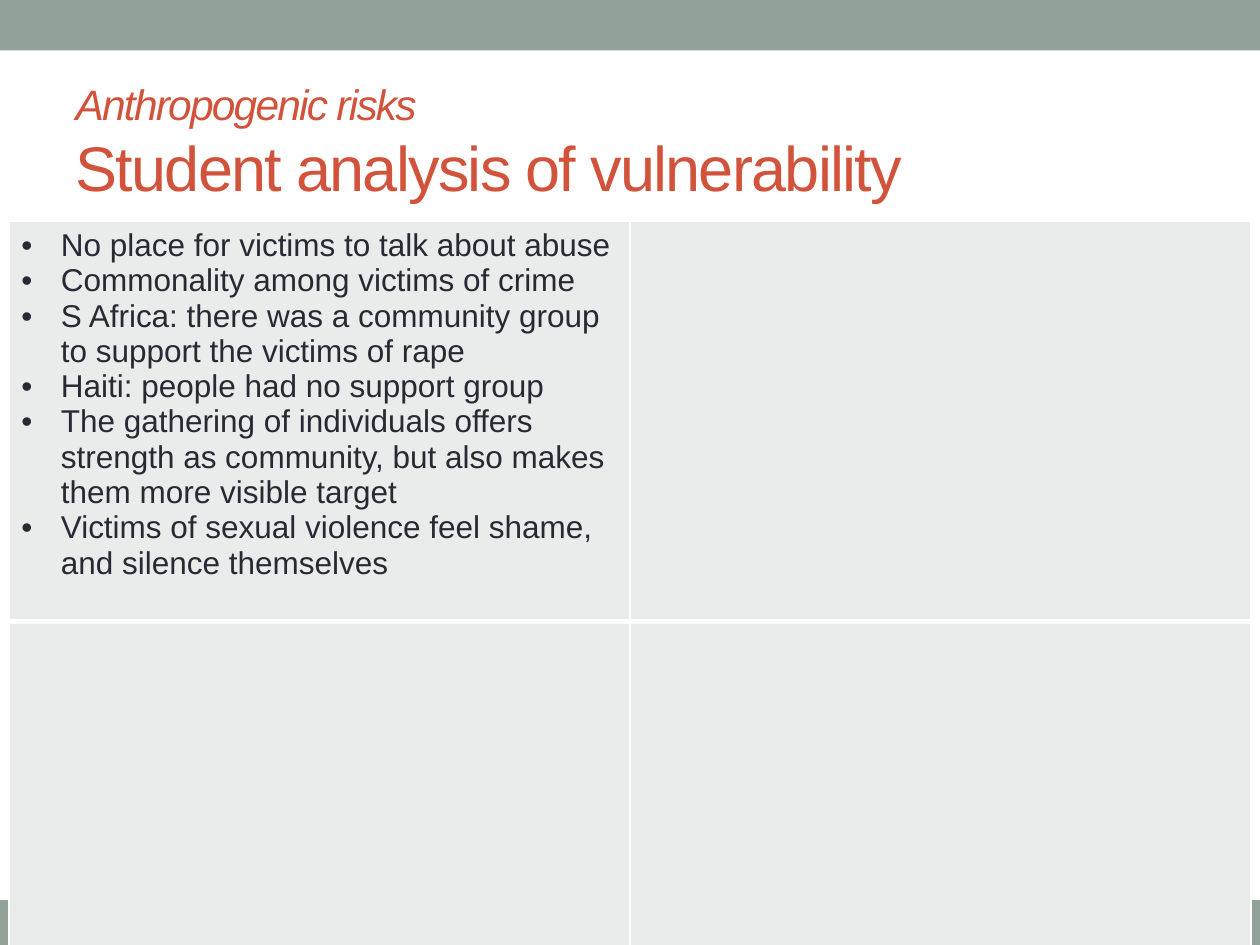
from lxml import etree
from pptx import Presentation
from pptx.dml.color import RGBColor
from pptx.enum.shapes import MSO_SHAPE
from pptx.enum.text import MSO_ANCHOR, MSO_AUTO_SIZE, PP_ALIGN
from pptx.oxml import parse_xml
from pptx.oxml.ns import nsdecls, qn
from pptx.util import Pt

SAGE = RGBColor(0x93, 0xA2, 0x99)
RUST = RGBColor(0xD2, 0x53, 0x3C)
INK = RGBColor(0x29, 0x29, 0x34)
PALE = RGBColor(0xE9, 0xEC, 0xEB)
WHITE = RGBColor(0xFF, 0xFF, 0xFF)

BAR_STOPS = [(0, "7B8E82"), (34, "7B8D83"), (70, "8A9E92"), (100, "93A299")]
TITLE_LINES = [
    ("Anthropogenic risks", {"size": Pt(24.3), "italic": True}),
    ("Student analysis of vulnerability", {"size": Pt(36), "italic": False}),
]
POINTS = [
    "No place for victims to talk about abuse",
    "Commonality among victims of crime",
    "S Africa: there was a community group to support the victims of rape",
    "Haiti: people had no support group",
    "The gathering of individuals offers strength as community, "
    "but also makes them more visible target",
    "Victims of sexual violence feel shame, and silence themselves",
]


def format_run(r, color, values):
    r.font.name = "Arial"
    r.font.color.rgb = color
    for name, value in values.items():
        setattr(r.font, name, value)


def set_borders(cell, widths):
    tcPr = cell._tc.get_or_add_tcPr()
    for i, (side, width) in enumerate(widths.items()):
        tcPr.insert(i, parse_xml(
            f'<a:ln{side} {nsdecls("a")} w="{Pt(width)}"><a:solidFill>'
            f'<a:srgbClr val="{WHITE}"/></a:solidFill></a:ln{side}>'))


prs = Presentation()
prs.slide_width, prs.slide_height = Pt(720), Pt(540)
s = prs.slides.add_slide(prs.slide_layouts[5])
s.background.fill.solid()
s.background.fill.fore_color.rgb = WHITE

# Top and bottom bars, behind everything else
bars = []
for i, (top, height) in enumerate([(0, 28.8), (514.8, 25.2)]):
    sp = s.shapes.add_shape(MSO_SHAPE.RECTANGLE, 0, Pt(top), Pt(720), Pt(height))
    sp.shadow.inherit = False
    sp.fill.solid()
    sp.fill.fore_color.rgb = SAGE
    sp.line.fill.background()
    s.shapes._spTree.insert(2 + i, sp._element)
    bars.append(sp)

# Radial gradient and outline of the bottom bar
stops = "".join(f'<a:gs pos="{pos * 1000}"><a:srgbClr val="{color}"/></a:gs>'
                for pos, color in BAR_STOPS)
spPr = bars[1]._element.spPr
spPr.replace(spPr.find(qn("a:solidFill")), parse_xml(
    f'<a:gradFill {nsdecls("a")}><a:gsLst>{stops}</a:gsLst><a:path path="circle">'
    '<a:fillToRect l="100000" t="100000" r="100000" b="100000"/></a:path></a:gradFill>'))
bars[1].line.color.rgb = SAGE
bars[1].line.width = Pt(0.75)

# Title
title = s.shapes.title
title.left, title.top, title.width, title.height = Pt(36), Pt(41.76), Pt(648), Pt(77.76)
tf = title.text_frame
tf.word_wrap = True
tf.auto_size = MSO_AUTO_SIZE.NONE
tf.vertical_anchor = MSO_ANCHOR.MIDDLE
p = tf.paragraphs[0]
p.alignment = PP_ALIGN.LEFT
for i, (text, values) in enumerate(TITLE_LINES):
    if i:
        p.add_line_break()
    r = p.add_run()
    r.text = text
    format_run(r, RUST, values)
    r.font._element.set("spc", "-100")

# Two by two table
table = s.shapes.add_table(2, 2, Pt(5.04), Pt(126.72), Pt(709.92), Pt(442.8)).table
table.first_row = table.horz_banding = False
for row, height in zip(table.rows, (228.6, 214.2)):
    row.height = Pt(height)
for i, row in enumerate(table.rows):
    for cell in row.cells:
        cell.fill.solid()
        cell.fill.fore_color.rgb = PALE
        set_borders(cell, {"L": 1, "R": 1, "T": 3 if i else 1, "B": 1 if i else 3})

# Bulleted points in the first cell
tf = table.cell(0, 0).text_frame
for i, text in enumerate(POINTS):
    p = tf.add_paragraph() if i else tf.paragraphs[0]
    r = p.add_run()
    r.text = text
    format_run(r, INK, {"size": Pt(18)})
    pPr = p._p.get_or_add_pPr()
    pPr.set("marL", str(Pt(22.5)))
    pPr.set("indent", str(Pt(-22.5)))
    etree.SubElement(pPr, qn("a:buFont")).set("typeface", "Arial")
    etree.SubElement(pPr, qn("a:buChar")).set("char", "•")

prs.save("out.pptx")
